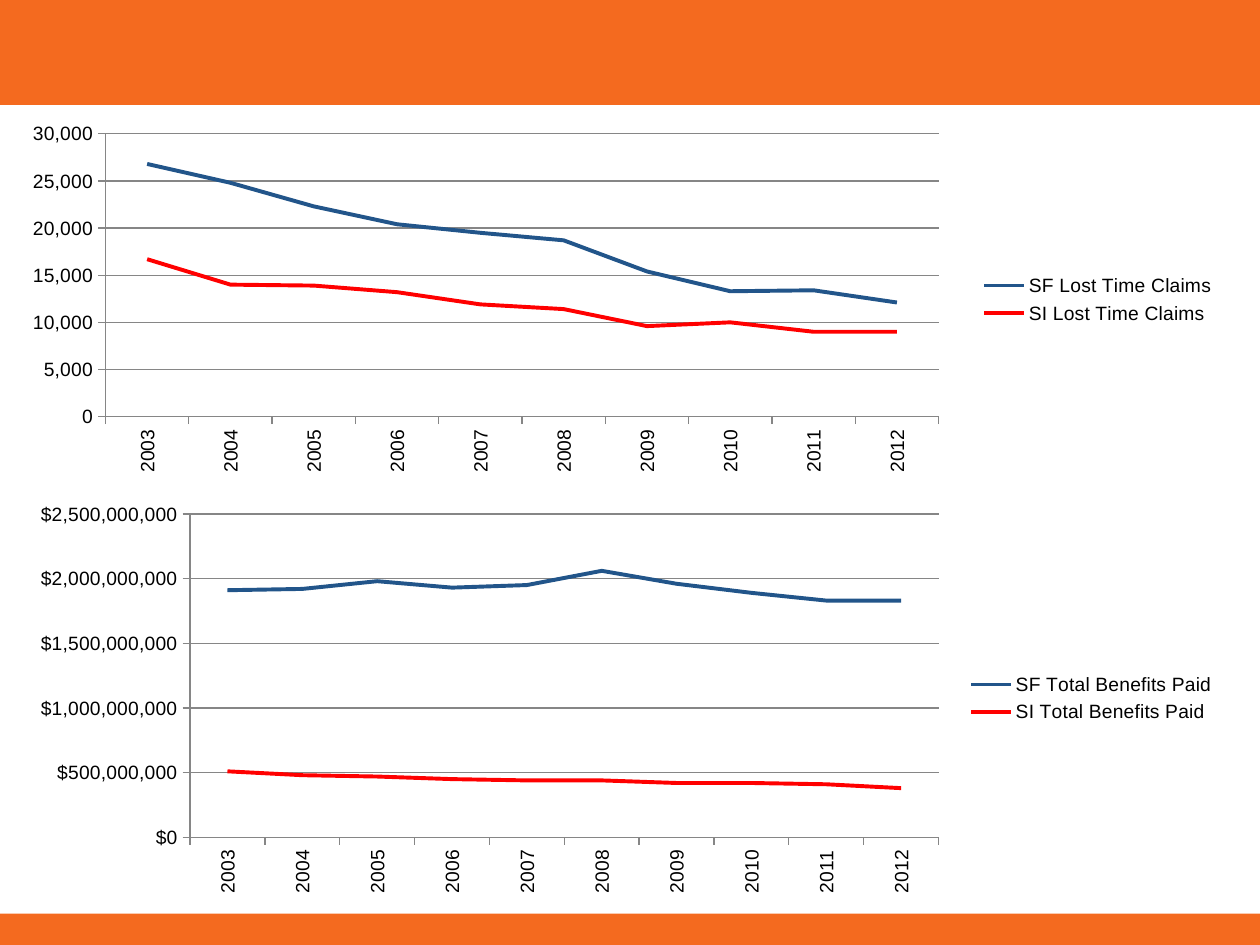
from lxml import etree
from pptx import Presentation
from pptx.chart.data import CategoryChartData
from pptx.dml.color import RGBColor
from pptx.enum.chart import XL_CHART_TYPE as ChartType
from pptx.enum.chart import XL_LEGEND_POSITION as LegendPosition
from pptx.enum.chart import XL_TICK_MARK as TickMark
from pptx.enum.shapes import MSO_SHAPE as Shape
from pptx.oxml.ns import qn
from pptx.util import Pt

EMU_PER_PX = 7620  # 120 px to the inch
SLIDE_WIDTH, SLIDE_HEIGHT = 1200, 900
FONT = "Arial"
COLORS = {"band": "F46A1F", "text": "000000", "axis": "868686",
          "SF": "22558A", "SI": "FF0000"}
YEARS = [str(year) for year in range(2003, 2013)]

LOST_TIME_CLAIMS = {
    "SF": [26800, 24800, 22300, 20400, 19500, 18700, 15400, 13300, 13400, 12100],
    "SI": [16700, 14000, 13900, 13200, 11900, 11400, 9600, 10000, 9000, 9000],
}
BENEFITS_IN_MILLIONS = {
    "SF": [1910, 1920, 1980, 1930, 1950, 2060, 1960, 1890, 1830, 1830],
    "SI": [510, 480, 470, 450, 440, 440, 420, 420, 410, 380],
}


def px(*lengths):
    return [length * EMU_PER_PX for length in lengths]


def color(name):
    return RGBColor.from_string(COLORS[name])


def add_band(slide, top, height):
    band = slide.shapes.add_shape(
        Shape.RECTANGLE, *px(0, top, SLIDE_WIDTH, height))
    band.shadow.inherit = False
    band.fill.solid()
    band.fill.fore_color.rgb = color("band")
    band.line.fill.background()


def style_font(font, size):
    font.name = FONT
    font.size = Pt(size)
    font.color.rgb = color("text")


def style_line(line, name, width):
    line.color.rgb = color(name)
    line.width = Pt(width)


def style_axis(axis):
    axis.major_tick_mark = TickMark.OUTSIDE
    axis.minor_tick_mark = TickMark.NONE
    style_font(axis.tick_labels.font, 11)
    style_line(axis.format.line, "axis", 0.75)


def place_plot(chart, x, y, width, height):
    """Fix the inner plot area, in fractions of the chart."""
    plot_area = chart.plots[0]._element.getparent()
    layout = plot_area.find(qn("c:layout"))
    if layout is None:
        layout = etree.Element(qn("c:layout"))
        plot_area.insert(0, layout)
    manual = etree.SubElement(layout, qn("c:manualLayout"))
    settings = {"layoutTarget": "inner", "xMode": "edge", "yMode": "edge",
                "x": x, "y": y, "w": width, "h": height}
    for tag, value in settings.items():
        etree.SubElement(manual, qn(f"c:{tag}")).set("val", str(value))


def add_line_chart(slide, box, measure, values, number_format, maximum, step, plot_box):
    data = CategoryChartData(number_format=number_format)
    data.categories = YEARS
    for group, numbers in values.items():
        data.add_series(f"{group} {measure}", numbers)
    chart = slide.shapes.add_chart(ChartType.LINE, *px(*box), data).chart
    chart.has_title = False
    style_font(chart.font, 11)
    place_plot(chart, *plot_box)

    # Axes
    years, amounts = chart.category_axis, chart.value_axis
    style_axis(years)
    style_axis(amounts)
    years.tick_labels.font  # labels are turned to read upwards
    years._element.find(qn("c:txPr")).find(qn("a:bodyPr")).set("rot", "-5400000")
    amounts.minimum_scale, amounts.maximum_scale = 0, maximum
    amounts.major_unit = step
    amounts.tick_labels.number_format = number_format
    amounts.tick_labels.number_format_is_linked = False
    amounts.has_major_gridlines = True
    style_line(amounts.major_gridlines.format.line, "axis", 0.75)

    # Series
    plot = chart.plots[0]
    plot.vary_by_categories = False
    for group, series in zip(values, plot.series):
        series.smooth = False
        style_line(series.format.line, group, 2.25)

    # Legend
    chart.has_legend = True
    chart.legend.position = LegendPosition.RIGHT
    chart.legend.include_in_layout = False
    style_font(chart.legend.font, 11)


def main():
    presentation = Presentation()
    presentation.slide_width, presentation.slide_height = px(SLIDE_WIDTH, SLIDE_HEIGHT)
    slide = presentation.slides.add_slide(presentation.slide_layouts[6])

    # Top and bottom bands
    add_band(slide, 0, 100)
    add_band(slide, 870, 30)

    # Claims above, benefits below
    add_line_chart(slide, (20, 110, 1150, 350), "Lost Time Claims", LOST_TIME_CLAIMS,
                   "#,##0", 30000, 5000, (0.07, 0.05, 0.69, 0.77))
    benefits = {group: [number * 10**6 for number in numbers]
                for group, numbers in BENEFITS_IN_MILLIONS.items()}
    add_line_chart(slide, (20, 470, 1150, 390), "Total Benefits Paid", benefits,
                   '"$"#,##0', 25 * 10**8, 5 * 10**8, (0.14, 0.05, 0.62, 0.79))

    presentation.save("out.pptx")


if __name__ == "__main__":
    main()
